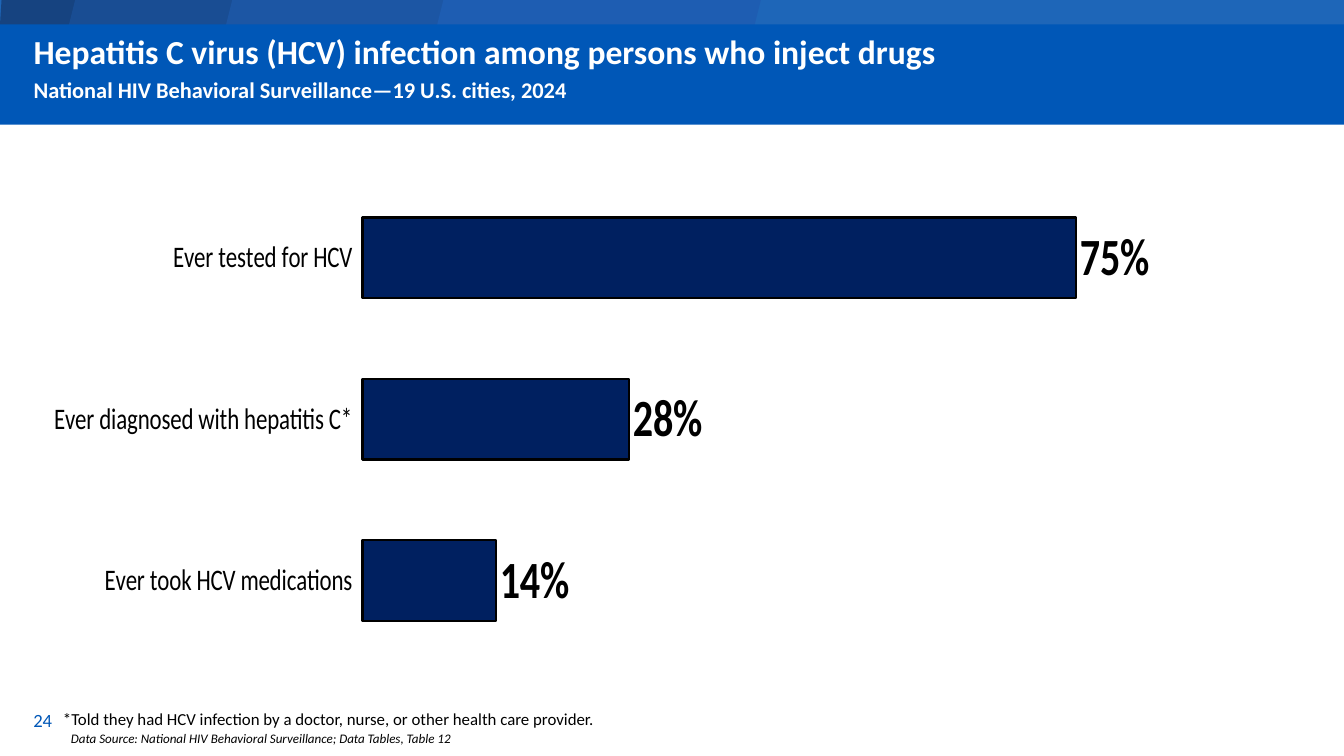
from lxml import etree
from pptx import Presentation
from pptx.chart.data import CategoryChartData
from pptx.dml.color import RGBColor
from pptx.enum import chart as charts, shapes, text
from pptx.oxml import ns
from pptx.util import Cm, Pt

FONT = "Calibri"
WHITE = RGBColor(0xFF, 0xFF, 0xFF)
BLACK = RGBColor(0, 0, 0)
BLUE = RGBColor(0x00, 0x57, 0xB7)
NAVY = RGBColor(0x00, 0x20, 0x60)
STRIP_BLUE = RGBColor(0x1E, 0x66, 0xB8)
STRIP_DARK = RGBColor(0x16, 0x43, 0x80)

# Content
TITLE_LINES = [
    ("Hepatitis C virus (HCV) infection among persons who inject drugs", 18),
    ("National HIV Behavioral Surveillance—19 U.S. cities, 2024", 12),
]
RATES = [
    ("Ever took HCV medications", 0.14),
    ("Ever diagnosed with hepatitis C*", 0.28),
    ("Ever tested for HCV", 0.75),
]
# wording, (left, top, width, height) in cm, size, colour, italic, wrap, anchor
FOOTER = [
    ("*Told they had HCV infection by a doctor, nurse, or other health care provider.",
     (0.94, 13.28, 10.69, 0.64), 9, BLACK, False, False, text.MSO_ANCHOR.TOP),
    ("24", (0.38, 13.23, 5.72, 0.76), 10, BLUE, False, True, text.MSO_ANCHOR.MIDDLE),
    ("Data Source: National HIV Behavioral Surveillance; Data Tables, Table 12",
     (1.09, 13.69, 8.66, 0.56), 7, BLACK, True, True, text.MSO_ANCHOR.TOP),
]
STRIP_HEIGHT = 0.48
STRIP_CORNER = [(0, STRIP_HEIGHT), (0.03, 0), (2.03, 0), (1.88, STRIP_HEIGHT)]
STRIP_TILES = [  # left, width, colour
    (1.3, 3.89, RGBColor(0x19, 0x4D, 0x93)),
    (4.27, 5.08, RGBColor(0x1C, 0x56, 0xA4)),
    (8.26, 6.12, RGBColor(0x1E, 0x5D, 0xB2)),
]
PLOT_AREA = {"x": 0.011, "y": 0.039, "w": 0.969, "h": 0.894}


def paint(shape, color):
    shape.shadow.inherit = False
    shape.fill.solid()
    shape.fill.fore_color.rgb = color
    shape.line.fill.background()


def add_block(page, kind, left, top, width, height, color):
    paint(page.shapes.add_shape(kind, Cm(left), Cm(top), Cm(width), Cm(height)), color)


def style(font, size, color, bold=False, italic=False):
    font.name, font.size, font.bold, font.italic = FONT, Pt(size), bold, italic
    font.color.rgb = color


def add_banner(page):
    kinds = shapes.MSO_SHAPE
    add_block(page, kinds.RECTANGLE, 0, 0, 25.4, STRIP_HEIGHT, STRIP_BLUE)
    points = [(Cm(x), Cm(y)) for x, y in STRIP_CORNER]
    builder = page.shapes.build_freeform(*points[0])
    builder.add_line_segments(points[1:], close=True)
    paint(builder.convert_to_shape(), STRIP_DARK)
    for left, width, color in STRIP_TILES:
        add_block(page, kinds.PARALLELOGRAM, left, 0, width, STRIP_HEIGHT, color)
    add_block(page, kinds.RECTANGLE, 0, 0.46, 25.4, 1.9, BLUE)


def fill_title(page):
    title = page.shapes.title
    title.left, title.top, title.width, title.height = Cm(0.38), Cm(0.46), Cm(19.2), Cm(1.55)
    # Bring the title in front of the banner
    page.shapes._spTree.append(title._element)
    frame = title.text_frame
    frame.auto_size = text.MSO_AUTO_SIZE.NONE
    frame.vertical_anchor = text.MSO_ANCHOR.TOP
    frame.text = "\n".join(line for line, _ in TITLE_LINES)
    for index, (para, (_, size)) in enumerate(zip(frame.paragraphs, TITLE_LINES)):
        para.alignment = text.PP_ALIGN.LEFT
        para.space_before = Pt(0.2 * size if index else 0)
        style(para.font, size, WHITE, bold=True)


def place_plot(chart):
    plot_area = chart._chartSpace.chart.plotArea
    for old in plot_area.findall(ns.qn("c:layout")):
        plot_area.remove(old)
    layout = etree.Element(ns.qn("c:layout"))
    manual = etree.SubElement(layout, ns.qn("c:manualLayout"))
    settings = {"layoutTarget": "inner", "xMode": "edge", "yMode": "edge", **PLOT_AREA}
    for name, value in settings.items():
        etree.SubElement(manual, ns.qn("c:" + name)).set("val", str(value))
    plot_area.insert(0, layout)


def add_rates_chart(page):
    data = CategoryChartData(number_format="0%")
    data.categories = [name for name, _ in RATES]
    data.add_series("Series 1", [rate for _, rate in RATES])
    chart = page.shapes.add_chart(charts.XL_CHART_TYPE.BAR_CLUSTERED, Cm(1.02), Cm(2.95),
                                  Cm(24.18), Cm(10.24), data).chart
    chart.has_legend = chart.has_title = False
    style(chart.font, 10, BLACK)
    place_plot(chart)

    # Axes
    names = chart.category_axis
    names.format.line.fill.background()
    names.has_major_gridlines = False
    names.major_tick_mark = charts.XL_TICK_MARK.OUTSIDE
    style(names.tick_labels.font, 16, BLACK)
    scale = chart.value_axis
    scale.minimum_scale, scale.maximum_scale, scale.major_unit = 0, 1, 0.2
    scale.has_major_gridlines = scale.visible = False

    # Bars and their values
    plot = chart.plots[0]
    plot.gap_width = 100
    plot.vary_by_categories = False
    bars = plot.series[0]
    bars.format.fill.solid()
    bars.format.fill.fore_color.rgb = NAVY
    bars.format.line.color.rgb = BLACK
    bars.format.line.width = Pt(1.5)
    labels = bars.data_labels
    labels.show_value = True
    labels.position = charts.XL_LABEL_POSITION.OUTSIDE_END
    labels.number_format, labels.number_format_is_linked = "0%", False
    style(labels.font, 28, BLACK, bold=True)


def add_footer(page):
    for wording, place, size, color, italic, wrap, anchor in FOOTER:
        frame = page.shapes.add_textbox(*map(Cm, place)).text_frame
        frame.word_wrap = wrap
        frame.vertical_anchor = anchor
        frame.text = wording
        style(frame.paragraphs[0].font, size, color, italic=italic)


def main():
    deck = Presentation()
    deck.slide_width, deck.slide_height = Cm(25.4), Cm(14.29)
    page = deck.slides.add_slide(deck.slide_layouts.get_by_name("Title Only"))
    add_banner(page)
    fill_title(page)
    add_rates_chart(page)
    add_footer(page)
    deck.save("out.pptx")


if __name__ == "__main__":
    main()
